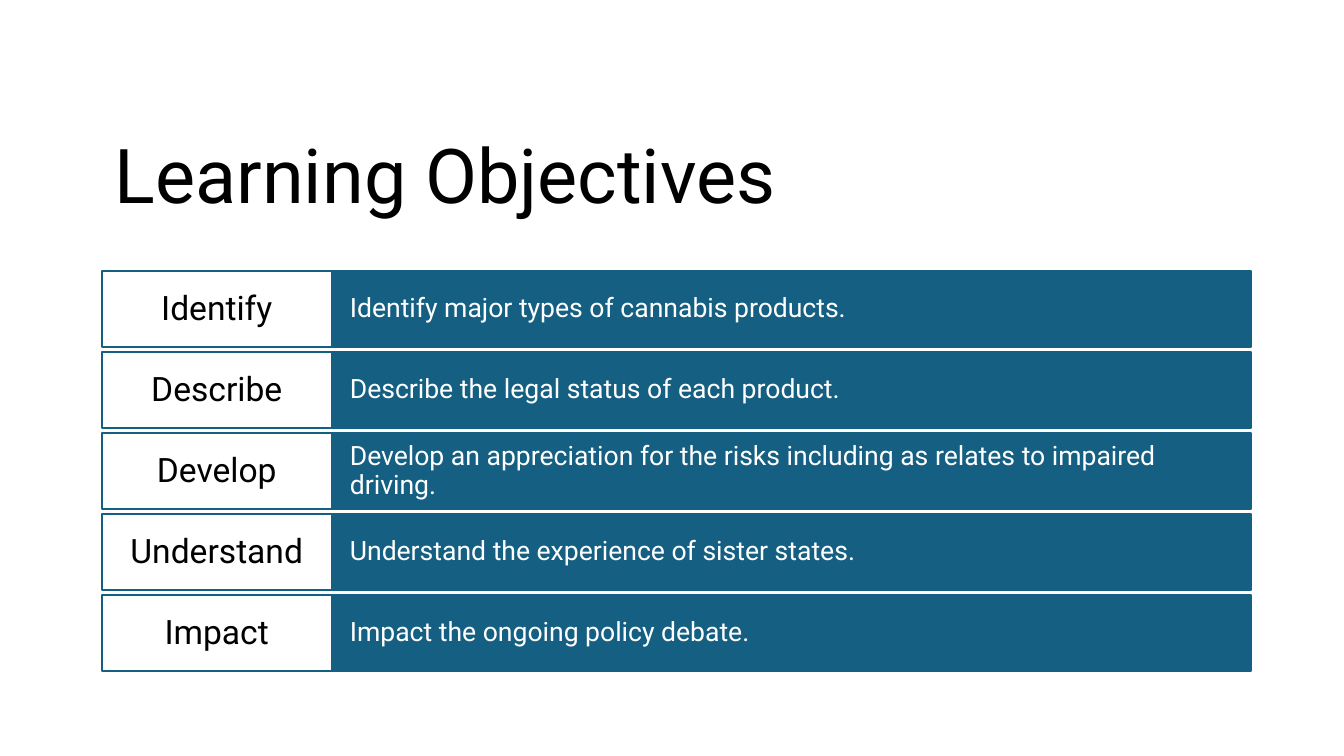
from pptx import Presentation
from pptx.dml.color import RGBColor
from pptx.enum.shapes import MSO_SHAPE
from pptx.enum.text import MSO_ANCHOR, MSO_AUTO_SIZE, PP_ALIGN
from pptx.util import Pt

FONT = "Roboto"
BLUE, WHITE, BLACK = "156082", "FFFFFF", "000000"
OBJECTIVES = [
    ("Identify", "Identify major types of cannabis products."),
    ("Describe", "Describe the legal status of each product."),
    ("Develop", "Develop an appreciation for the risks including as relates to impaired driving."),
    ("Understand", "Understand the experience of sister states."),
    ("Impact", "Impact the ongoing policy debate."),
]


def color(hex_code):
    """Turn a hex string into a colour."""
    return RGBColor.from_string(hex_code)


def set_attributes(target, values):
    """Set every attribute in the dict on the target."""
    for name, value in values.items():
        setattr(target, name, value)


def write_text(shape, text, size, hex_code, align, anchor, inset):
    """Write one formatted paragraph into a shape."""
    frame = shape.text_frame
    set_attributes(frame, {
        "word_wrap": True, "auto_size": MSO_AUTO_SIZE.NONE, "vertical_anchor": anchor,
        "margin_left": Pt(inset), "margin_right": Pt(inset),
        "margin_top": Pt(4), "margin_bottom": Pt(4),
    })
    paragraph = frame.paragraphs[0]
    set_attributes(paragraph, {"alignment": align, "line_spacing": 0.9})
    run = paragraph.add_run()
    run.text = text
    set_attributes(run.font, {"name": FONT, "size": Pt(size)})
    run.font.color.rgb = color(hex_code)


def add_title(slide, left, top, width, height):
    """Add the slide title at the bottom of its box."""
    shape = slide.shapes.add_textbox(Pt(left), Pt(top), Pt(width), Pt(height))
    write_text(shape, "Learning Objectives", 54, BLACK, PP_ALIGN.LEFT, MSO_ANCHOR.BOTTOM, 7.2)


def add_cell(slide, left, top, width, height, fill, **text_format):
    """Add one outlined rectangle with vertically centred text."""
    shape = slide.shapes.add_shape(
        MSO_SHAPE.RECTANGLE, Pt(left), Pt(top), Pt(width), Pt(height))
    shape.shadow.inherit = False
    shape.fill.solid()
    shape.fill.fore_color.rgb = color(fill)
    shape.line.color.rgb = color(BLUE)
    shape.line.width = Pt(1.5)
    write_text(shape, anchor=MSO_ANCHOR.MIDDLE, **text_format)


def add_objectives(slide, left, top, width, height):
    """Stack the objectives, each a label beside its description."""
    gap = 3.3
    row_height = (height - gap * (len(OBJECTIVES) - 1)) / len(OBJECTIVES)
    label_width = width / 5
    for index, (label, description) in enumerate(OBJECTIVES):
        row_top = top + index * (row_height + gap)
        add_cell(slide, left + label_width, row_top, width - label_width, row_height, BLUE,
                 text=description, size=19, hex_code=WHITE, align=PP_ALIGN.LEFT, inset=13)
        add_cell(slide, left, row_top, label_width, row_height, WHITE,
                 text=label, size=24, hex_code=BLACK, align=PP_ALIGN.CENTER, inset=8.6)


def main():
    """Build and save the presentation."""
    presentation = Presentation()
    set_attributes(presentation, {"slide_width": Pt(960), "slide_height": Pt(540)})
    slide = presentation.slides.add_slide(presentation.slide_layouts[6])
    add_title(slide, 75, 102.2, 812, 59)
    add_objectives(slide, 72.75, 193.5, 820.8, 286)
    presentation.save("out.pptx")


if __name__ == "__main__":
    main()
